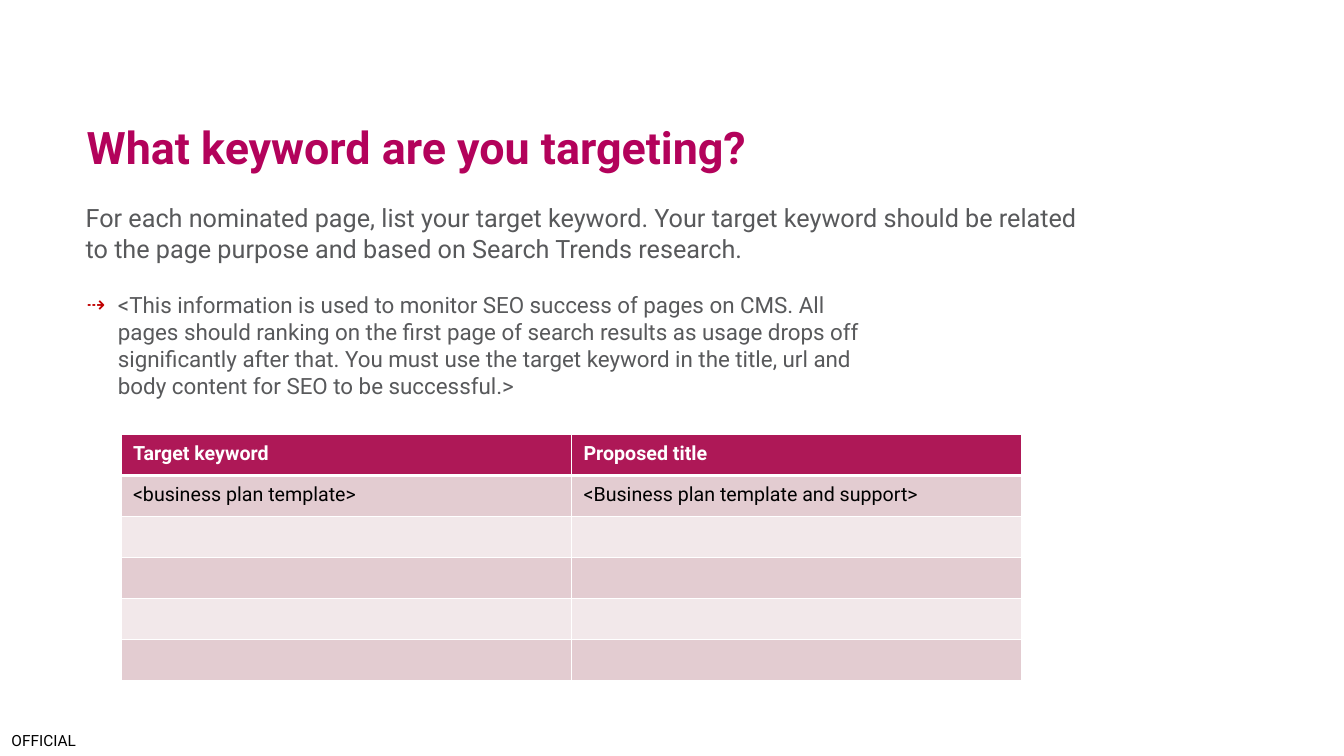
import pptx
import pptx.dml.color
import pptx.enum.text
import pptx.oxml
import pptx.oxml.ns
import pptx.util

COLORS = {
    "heading": "B3025B", "body": "58595B", "bullet": "C00000", "label": "000000",
    "header": "AE1857", "dark_band": "E3CCD1", "light_band": "F2E8EA", "white": "FFFFFF",
}
ANCHOR = pptx.enum.text.MSO_ANCHOR
ALIGN = pptx.enum.text.PP_ALIGN
GRID = pptx.util.Inches(0.1)  # one column or row of the slide grid
COLUMNS, ROWS = 133.33, 75


def place(shape, left, top, width, height):
    box = {"left": left, "top": top, "width": width, "height": height}
    for name, units in box.items():
        setattr(shape, name, round(units * GRID))


def write(frame, text, color, size, bold=False, align=ALIGN.LEFT, **spacing):
    paragraph = frame.paragraphs[0]
    for name, value in {"alignment": align, **spacing}.items():
        setattr(paragraph, name, value)
    run = paragraph.add_run()
    run.text = text
    for name, value in {"name": "Roboto", "size": pptx.util.Pt(size), "bold": bold}.items():
        setattr(run.font, name, value)
    run.font.color.rgb = pptx.dml.color.RGBColor.from_string(COLORS[color])
    return paragraph


presentation = pptx.Presentation()
presentation.slide_width = round(COLUMNS * GRID)
presentation.slide_height = ROWS * GRID
slide = presentation.slides.add_slide(presentation.slide_layouts.get_by_name("Two Content"))
title, intro, guidance = slide.placeholders

# Title and body text
place(title, 7.6, 4, 78.7, 13.8)
place(intro, 7.5, 19.6, 102, 7.9)
place(guidance, 7.6, 28.4, 78.9, 13.8)
for shape in (title, intro, guidance):
    shape.text_frame.auto_size = pptx.enum.text.MSO_AUTO_SIZE.NONE
    shape.text_frame.vertical_anchor = ANCHOR.BOTTOM if shape is title else ANCHOR.TOP

write(title.text_frame, "What keyword are you targeting?", "heading", 32, True, line_spacing=0.9)
before = pptx.util.Pt(10)
intro_paragraph = write(
    intro.text_frame,
    "For each nominated page, list your target keyword. Your target keyword should be "
    "related to the page purpose and based on Search Trends research.",
    "body", 18, space_before=before)
guidance_paragraph = write(
    guidance.text_frame,
    "<This information is used to monitor SEO success of pages on CMS. All pages should "
    "ranking on the first page of search results as usage drops off significantly after "
    "that. You must use the target keyword in the title, url and body content for SEO to "
    "be successful.>",
    "body", 16, space_before=before)

# Indents and bullets
namespace = pptx.oxml.ns.nsdecls("a")
bullets = [
    (intro_paragraph, 0, [f"<a:buNone {namespace}/>"]),
    (guidance_paragraph, pptx.util.Inches(0.31), [
        f'<a:buClr {namespace}><a:srgbClr val="{COLORS["bullet"]}"/></a:buClr>',
        f'<a:buChar {namespace} char="⇢"/>']),
]
for paragraph, indent, elements in bullets:
    properties = paragraph._p.get_or_add_pPr()
    properties.set("marL", str(indent))
    properties.set("indent", str(-indent))
    for element in elements:
        properties.append(pptx.oxml.parse_xml(element))

# Keyword table
rows = [["Target keyword", "Proposed title"],
        ["<business plan template>", "<Business plan template and support>"]]
rows += [["", ""]] * 4
frame = slide.shapes.add_table(len(rows), 2, 0, 0, 0, 0)
place(frame, 12, 43.1, 89.4, 4.07 * len(rows))
table = frame.table
for column in table.columns:
    column.width = round(44.7 * GRID)
margins = {"margin_left": 0.12, "margin_top": 0.08, "margin_right": 0.12, "margin_bottom": 0.04}
for row_index, texts in enumerate(rows):
    table.rows[row_index].height = round(4.07 * GRID)
    header = row_index == 0
    band = "header" if header else "dark_band" if row_index % 2 else "light_band"
    for column_index, text in enumerate(texts):
        cell = table.cell(row_index, column_index)
        cell_properties = cell._tc.get_or_add_tcPr()
        for side in "LRTB":
            thick = (header and side == "B") or (row_index == 1 and side == "T")
            cell_properties.append(pptx.oxml.parse_xml(
                f'<a:ln{side} {namespace} w="{pptx.util.Pt(3 if thick else 1)}"><a:solidFill>'
                f'<a:srgbClr val="{COLORS["white"]}"/></a:solidFill></a:ln{side}>'))
        cell.fill.solid()
        cell.fill.fore_color.rgb = pptx.dml.color.RGBColor.from_string(COLORS[band])
        if text:
            for name, inches in margins.items():
                setattr(cell, name, pptx.util.Inches(inches))
            write(cell.text_frame, text, "white" if header else "label", 14, header)

# Classification label in the bottom corner
label = slide.shapes.add_textbox(0, 0, 0, 0)
place(label, 0, 72.5, 8.7, 1.9)
for name in margins:
    setattr(label.text_frame, name, 0)
label.text_frame.word_wrap = True
label.text_frame.vertical_anchor = ANCHOR.MIDDLE
write(label.text_frame, "OFFICIAL", "label", 11, align=ALIGN.CENTER)

presentation.save("out.pptx")
